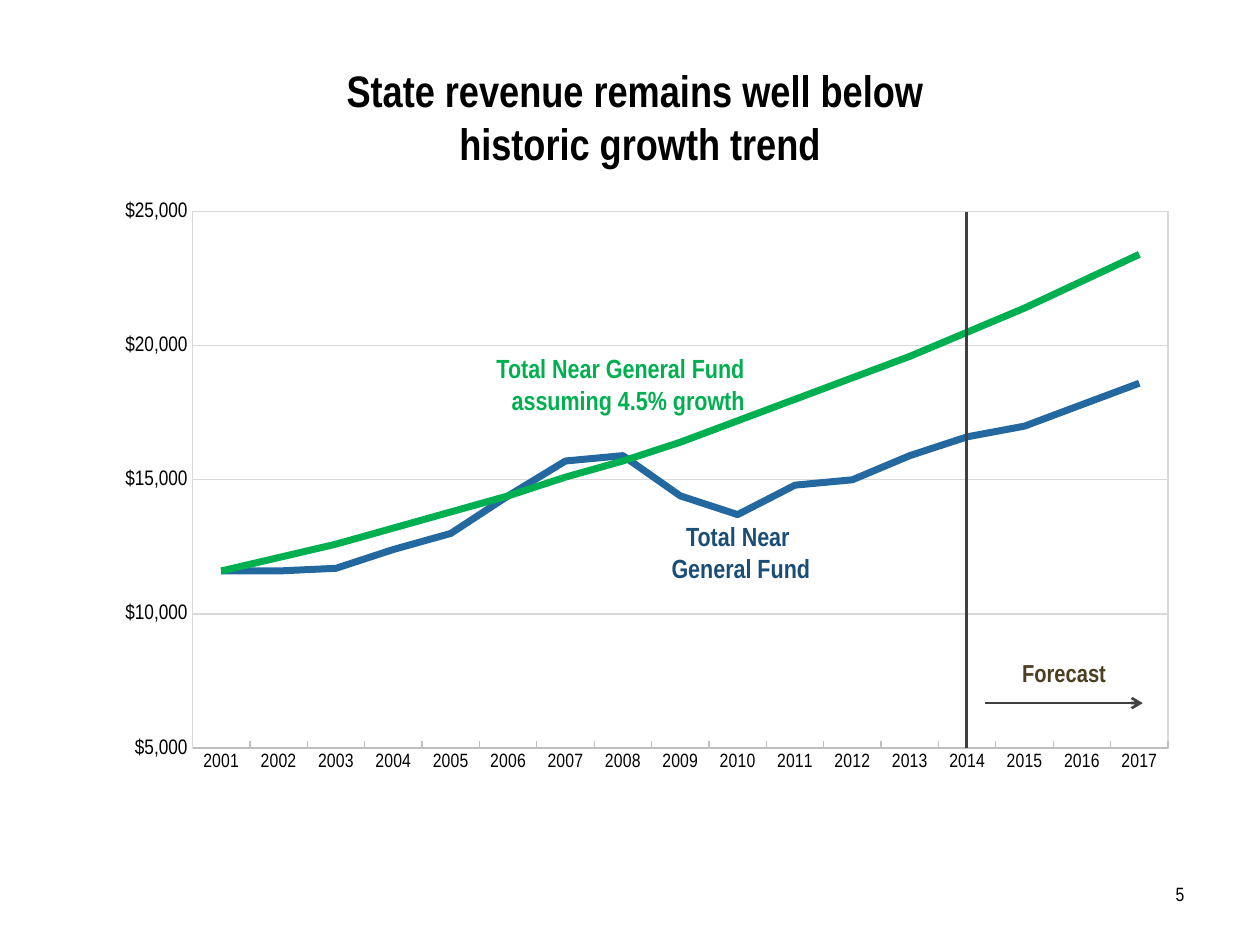
"""Build the slide comparing state revenue with its historic growth trend."""
from lxml import etree
from pptx import Presentation
from pptx.chart.data import CategoryChartData
from pptx.dml.color import RGBColor
from pptx.enum.chart import XL_CHART_TYPE, XL_TICK_MARK
from pptx.enum.shapes import MSO_CONNECTOR
from pptx.enum.text import MSO_ANCHOR, MSO_AUTO_SIZE, PP_ALIGN
from pptx.oxml import parse_xml
from pptx.oxml.ns import nsdecls, qn
from pptx.util import Inches, Pt

LINE_CHART = XL_CHART_TYPE.LINE
TICK_INSIDE, TICK_NONE = XL_TICK_MARK.INSIDE, XL_TICK_MARK.NONE
STRAIGHT = MSO_CONNECTOR.STRAIGHT
MIDDLE, TOP = MSO_ANCHOR.MIDDLE, MSO_ANCHOR.TOP
NO_FIT, FIT_SHAPE = MSO_AUTO_SIZE.NONE, MSO_AUTO_SIZE.SHAPE_TO_FIT_TEXT
CENTER, RIGHT = PP_ALIGN.CENTER, PP_ALIGN.RIGHT
FONT = "Arial Narrow"
BLACK, GREEN, BLUE, GRID = "000000", "00B050", "23689F", "D9D9D9"


def set_line(line, color, width):
    line.color.rgb = RGBColor.from_string(color)
    line.width = Pt(width)


def write(box, text, size, color, align, bold=True, anchor=TOP, fit=FIT_SHAPE):
    frame = box.text_frame
    frame.text = text
    frame.word_wrap = True
    frame.auto_size = fit
    frame.vertical_anchor = anchor
    for para in frame.paragraphs:
        para.alignment = align
        for span in para.runs:
            span.font.name = FONT
            span.font.size = Pt(size)
            span.font.bold = bold
            span.font.color.rgb = RGBColor.from_string(color)


deck = Presentation()
deck.slide_width, deck.slide_height = Inches(10), Inches(7.5)
page = deck.slides.add_slide(deck.slide_layouts[0])
subtitle = page.placeholders[1].element
subtitle.getparent().remove(subtitle)

title = page.shapes.title
title.left, title.top = Inches(0.83), Inches(0.42)
title.width, title.height = Inches(8.5), Inches(1)
write(title, "State revenue remains well below \vhistoric growth trend",
      25.2, BLACK, CENTER, anchor=MIDDLE, fit=NO_FIT)

data = CategoryChartData()
data.categories = [str(year) for year in range(2001, 2018)]
data.add_series("Total Near General Fund", [
    11600, 11600, 11700, 12400, 13000, 14400, 15700, 15900, 14400,
    13700, 14800, 15000, 15900, 16600, 17000, 17800, 18600])
data.add_series("Total assuming 4.5% growth", [
    11600, 12100, 12600, 13200, 13800, 14400, 15100, 15700, 16400,
    17200, 18000, 18800, 19600, 20500, 21400, 22400, 23400])
chart = page.shapes.add_chart(LINE_CHART, Inches(0.67), Inches(1.5),
                              Inches(8.67), Inches(4.83), data).chart
chart.has_legend = False
chart.has_title = False
chart.font.name = FONT
chart.font.size = Pt(18)
chart.font.color.rgb = RGBColor.from_string(BLACK)
chart.plots[0].vary_by_categories = False
for series, color in zip(chart.plots[0].series, (BLUE, GREEN)):
    series.smooth = False
    set_line(series.format.line, color, 4)

years, dollars = chart.category_axis, chart.value_axis
for axis, size, tick, color in ((years, 11, TICK_INSIDE, "BFBFBF"),
                                (dollars, 12, TICK_NONE, GRID)):
    axis.tick_labels.font.size = Pt(size)
    axis.tick_labels.font.name = FONT
    axis.major_tick_mark = tick
    axis.minor_tick_mark = TICK_NONE
    set_line(axis.format.line, color, 0.75)
dollars.minimum_scale, dollars.maximum_scale = 5000, 25000
dollars.major_unit = 5000
dollars.tick_labels.number_format = '"$"#,##0'
dollars.tick_labels.number_format_is_linked = False
set_line(dollars.major_gridlines.format.line, GRID, 0.75)

plot_area = chart.plots[0]._element.getparent()
for layout in plot_area.findall(qn("c:layout")):
    plot_area.remove(layout)
settings = {"layoutTarget": "inner", "xMode": "edge", "yMode": "edge",
            "x": 0.099, "y": 0.037, "w": 0.893, "h": 0.882}
inner = "".join(f'<c:{name} val="{value}"/>' for name, value in settings.items())
plot_area.insert(0, parse_xml(
    f'<c:layout {nsdecls("c")}><c:manualLayout>{inner}</c:manualLayout></c:layout>'))
plot_area.append(parse_xml(
    f'<c:spPr {nsdecls("c", "a")}><a:noFill/><a:ln w="9525"><a:solidFill>'
    f'<a:srgbClr val="{GRID}"/></a:solidFill></a:ln></c:spPr>'))

labels = [
    ((5.14, 4.08, 1.48, 0.61), "Total Near \vGeneral Fund", 15, "1A4E77", CENTER),
    ((3.76, 2.75, 2.25, 0.61), "Total Near General Fund\nassuming 4.5% growth",
     15, GREEN, RIGHT),
    ((7.77, 5.17, 1.35, 0.34), "Forecast", 14, "4B3E21", CENTER),
]
for place, text, size, color, align in labels:
    box = page.shapes.add_textbox(*map(Inches, place))
    write(box, text, size, color, align)

for ends, arrow in (((7.67, 5.94, 7.67, 1.68), False),
                    ((7.82, 5.58, 9.07, 5.58), True)):
    rule = page.shapes.add_connector(STRAIGHT, *map(Inches, ends))
    set_line(rule.line, "404040", 1.5)
    properties = rule._element.spPr
    if arrow:
        etree.SubElement(properties.find(qn("a:ln")), qn("a:tailEnd"), type="arrow")
    etree.SubElement(properties, qn("a:effectLst"))

number = page.shapes.add_textbox(Inches(7.17), Inches(6.95), Inches(2.33), Inches(0.4))
write(number, "5", 11, BLACK, RIGHT, bold=False, fit=NO_FIT)

deck.save("out.pptx")
